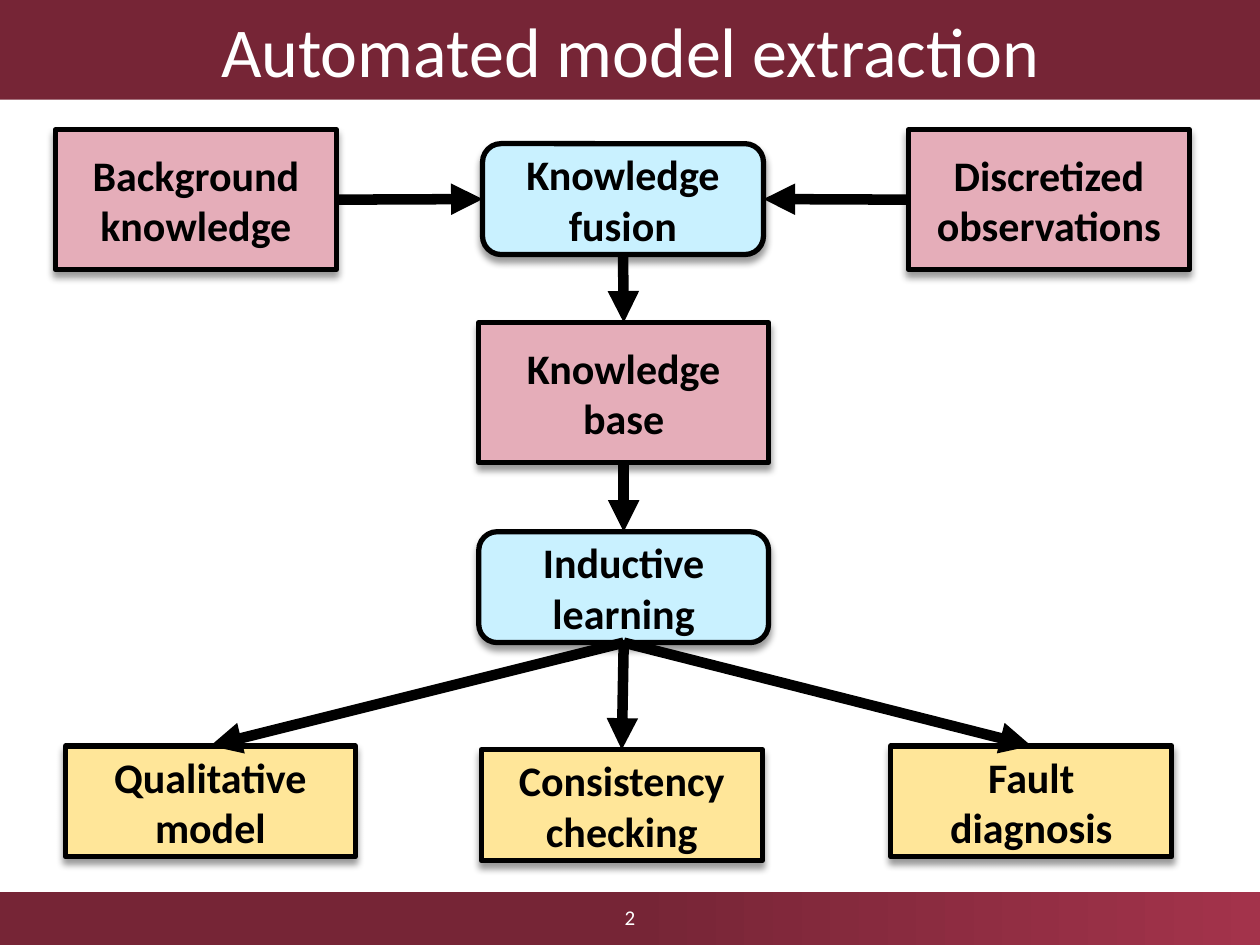
from dataclasses import dataclass

from lxml import etree
from pptx import Presentation
from pptx.dml.color import RGBColor
from pptx.enum.shapes import MSO_CONNECTOR, MSO_SHAPE
from pptx.enum.text import MSO_ANCHOR, MSO_AUTO_SIZE, PP_ALIGN
from pptx.oxml.ns import qn
from pptx.util import Inches, Pt

RECTANGLE = MSO_SHAPE.RECTANGLE
ROUNDED = MSO_SHAPE.ROUNDED_RECTANGLE
STRAIGHT = MSO_CONNECTOR.STRAIGHT
MIDDLE = MSO_ANCHOR.MIDDLE
NO_AUTOFIT = MSO_AUTO_SIZE.NONE
CENTER = PP_ALIGN.CENTER
TOP, LEFT, BOTTOM, RIGHT = range(4)
TITLE_ONLY = 5


@dataclass(frozen=True)
class Theme:
    """Colours, font and sizes of the slide."""
    font: str = "Calibri"
    band: RGBColor = RGBColor(0x76, 0x25, 0x36)
    band_end: RGBColor = RGBColor(0xA3, 0x33, 0x4B)
    light: RGBColor = RGBColor(0xFF, 0xFF, 0xFF)
    dark: RGBColor = RGBColor(0x00, 0x00, 0x00)
    knowledge: RGBColor = RGBColor(0xE5, 0xAD, 0xB9)
    process: RGBColor = RGBColor(0xC9, 0xF1, 0xFF)
    result: RGBColor = RGBColor(0xFF, 0xE6, 0x99)
    title_size: Pt = Pt(40)
    label_size: Pt = Pt(24)
    number_size: Pt = Pt(12)
    outline: Pt = Pt(3)
    arrow: Pt = Pt(6)


THEME = Theme()

NODES = {
    "background": ("Background\nknowledge", RECTANGLE, THEME.knowledge, (0.44, 1.03, 2.23, 1.11)),
    "observations": ("Discretized\nobservations", RECTANGLE, THEME.knowledge, (7.21, 1.03, 2.23, 1.11)),
    "fusion": ("Knowledge\nfusion", ROUNDED, THEME.process, (3.83, 1.14, 2.23, 0.88)),
    "base": ("Knowledge base", RECTANGLE, THEME.knowledge, (3.8, 2.56, 2.3, 1.11)),
    "learning": ("Inductive\nlearning", ROUNDED, THEME.process, (3.8, 4.22, 2.3, 0.88)),
    "model": ("Qualitative\nmodel", RECTANGLE, THEME.result, (0.52, 5.92, 2.3, 0.88)),
    "checking": ("Consistency checking", RECTANGLE, THEME.result, (3.82, 5.95, 2.23, 0.88)),
    "diagnosis": ("Fault\ndiagnosis", RECTANGLE, THEME.result, (7.07, 5.92, 2.23, 0.88)),
}

ARROWS = [
    ("background", RIGHT, "fusion", LEFT),
    ("observations", LEFT, "fusion", RIGHT),
    ("fusion", BOTTOM, "base", TOP),
    ("base", BOTTOM, "learning", TOP),
    ("learning", BOTTOM, "model", TOP),
    ("learning", BOTTOM, "checking", TOP),
    ("learning", BOTTOM, "diagnosis", TOP),
]


def inches(box):
    """Turn a box of plain numbers into lengths."""
    return [Inches(value) for value in box]


def write_text(shape, text, size, color, bold=False):
    """Write centred text, with a line break at each newline."""
    frame = shape.text_frame
    frame.word_wrap = True
    frame.auto_size = NO_AUTOFIT
    frame.vertical_anchor = MIDDLE
    paragraph = frame.paragraphs[0]
    paragraph.alignment = CENTER
    for index, line in enumerate(text.split("\n")):
        if index:
            paragraph.add_line_break()
        run = paragraph.add_run()
        run.text = line
        run.font.name = THEME.font
        run.font.size = size
        run.font.bold = bold
        run.font.color.rgb = color


def add_shadow(shape):
    """Give a shape a soft shadow straight below it."""
    shape.shadow.inherit = False
    effects = shape.element.spPr.find(qn("a:effectLst"))
    shadow = etree.SubElement(
        effects, qn("a:outerShdw"), blurRad=str(Pt(4)), dist=str(Pt(3)),
        dir="5400000", algn="ctr", rotWithShape="0")
    color = etree.SubElement(shadow, qn("a:srgbClr"), val=str(THEME.dark))
    etree.SubElement(color, qn("a:alpha"), val="40000")


def add_title(slide, text, box):
    """Place the title as a full-width band."""
    title = slide.shapes.title
    title.left, title.top, title.width, title.height = inches(box)
    title.fill.solid()
    title.fill.fore_color.rgb = THEME.band
    write_text(title, text, THEME.title_size, THEME.light)


def add_footer(slide, number, box):
    """Place the gradient footer band with its centred slide number."""
    left, top, width, height = inches(box)
    band = slide.shapes.add_shape(RECTANGLE, left, top, width, height)
    band.shadow.inherit = False
    band.line.fill.background()
    band.fill.gradient()
    band.fill.gradient_angle = 0
    colors = [(0.5, THEME.band), (1, THEME.band_end)]
    for stop, (position, color) in zip(band.fill.gradient_stops, colors):
        stop.position = position
        stop.color.rgb = color
    number_width = Inches(2.25)
    number_box = slide.shapes.add_textbox(
        left + (width - number_width) // 2, top, number_width, Inches(0.4))
    write_text(number_box, number, THEME.number_size, THEME.light)


def add_node(slide, text, kind, color, box):
    """Place one labelled box of the flow chart."""
    node = slide.shapes.add_shape(kind, *inches(box))
    node.fill.solid()
    node.fill.fore_color.rgb = color
    node.line.color.rgb = THEME.dark
    node.line.width = THEME.outline
    add_shadow(node)
    write_text(node, text, THEME.label_size, THEME.dark, bold=True)
    return node


def add_arrow(slide, source, source_side, target, target_side):
    """Join two boxes with an arrow."""
    arrow = slide.shapes.add_connector(STRAIGHT, 0, 0, 0, 0)
    arrow.begin_connect(source, source_side)
    arrow.end_connect(target, target_side)
    arrow.line.color.rgb = THEME.dark
    arrow.line.width = THEME.arrow
    etree.SubElement(arrow.line._get_or_add_ln(), qn("a:tailEnd"), type="triangle")
    etree.SubElement(arrow.element.spPr, qn("a:effectLst"))


def add_flow_chart(slide):
    """Place all boxes and the arrows between them."""
    nodes = {name: add_node(slide, *node) for name, node in NODES.items()}
    for source, source_side, target, target_side in ARROWS:
        add_arrow(slide, nodes[source], source_side, nodes[target], target_side)


def main():
    """Build and save the presentation."""
    presentation = Presentation()
    presentation.slide_width = Inches(10)
    presentation.slide_height = Inches(7.5)
    slide = presentation.slides.add_slide(presentation.slide_layouts[TITLE_ONLY])
    add_title(slide, "Automated model extraction", (0, 0, 10, 0.79))
    add_footer(slide, "2", (0, 7.08, 10, 0.42))
    add_flow_chart(slide)
    presentation.save("out.pptx")


if __name__ == "__main__":
    main()
